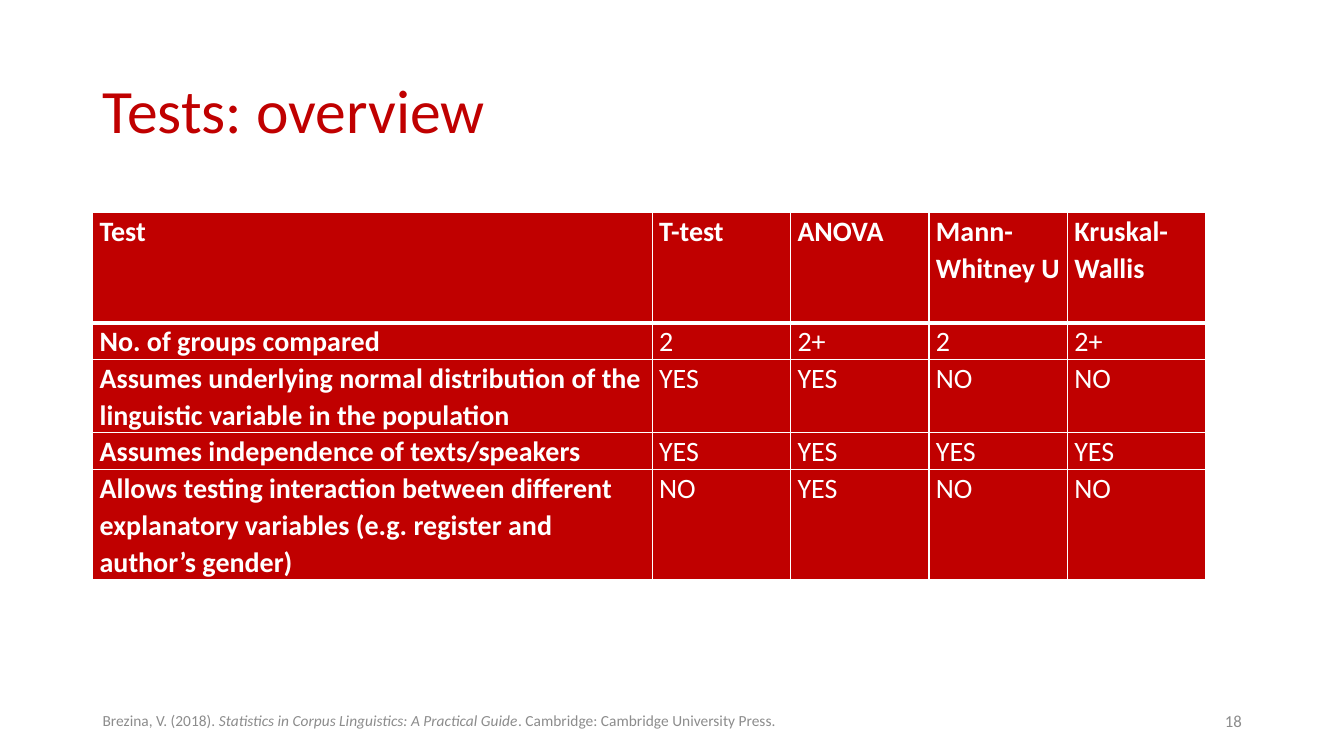
from lxml import etree
from pptx import Presentation
from pptx.dml.color import RGBColor
from pptx.enum.text import MSO_ANCHOR, PP_ALIGN
from pptx.oxml.ns import qn
from pptx.util import Pt

LEFT, RIGHT, JUST = PP_ALIGN.LEFT, PP_ALIGN.RIGHT, PP_ALIGN.JUSTIFY
MIDDLE = MSO_ANCHOR.MIDDLE

# Content
TITLE = "Tests: overview"
ROWS = [
    ("Test", "T-test", "ANOVA", "Mann-Whitney U", "Kruskal-Wallis"),
    ("No. of groups compared", "2", "2+", "2", "2+"),
    ("Assumes underlying normal distribution of the linguistic variable "
     "in the population", "YES", "YES", "NO", "NO"),
    ("Assumes independence of texts/speakers", "YES", "YES", "YES", "YES"),
    ("Allows testing interaction between different explanatory variables "
     "(e.g. register and author’s gender)", "NO", "YES", "NO", "NO"),
]
SOURCE = [
    ("Brezina, V. (2018). ", False),
    ("Statistics in Corpus Linguistics: A Practical Guide", True),
    (". Cambridge: Cambridge University Press.", False),
]
NUMBER = [("18", False)]

# Format
COLORS = {"red": "C00000", "white": "FFFFFF", "gray": "8C8C8C"}
FONT = "Calibri"
EDGE = 66.2
WIDTHS = [399.6] + [98.9] * 4
LINES = [3, 1, 2, 1, 3]
LINE = 26.2


def color(name):
    return RGBColor.from_string(COLORS[name])


def style(font, name, **values):
    values = {"name": FONT, **values}
    for key, value in values.items():
        setattr(font, key, value)
    font.color.rgb = color(name)


def place(shape, *box):
    for key, value in zip(("left", "top", "width", "height"), box):
        setattr(shape, key, Pt(value))


def label(box, parts, size, align):
    shape = slide.shapes.add_textbox(*map(Pt, box))
    frame = shape.text_frame
    frame.word_wrap = True
    frame.vertical_anchor = MIDDLE
    para = frame.paragraphs[0]
    para.alignment = align
    for text, slant in parts:
        run = para.add_run()
        run.text = text
        style(run.font, "gray", size=Pt(size), italic=slant)


def border(cell, row):
    props = cell._tc.get_or_add_tcPr()
    widths = {"lnL": 1, "lnR": 1, "lnT": 3 if row == 1 else 1,
              "lnB": 3 if row == 0 else 1}
    for spot, (tag, width) in enumerate(widths.items()):
        line = etree.Element(qn("a:" + tag), w=str(Pt(width)))
        fill = etree.SubElement(line, qn("a:solidFill"))
        etree.SubElement(fill, qn("a:srgbClr"), val=COLORS["white"])
        props.insert(spot, line)


prs = Presentation()
prs.slide_width, prs.slide_height = Pt(960), Pt(540)
slide = prs.slides.add_slide(prs.slide_layouts[5])

# Title
title = slide.shapes.title
place(title, EDGE, 28.8, 828, 104.4)
title.text_frame.text = TITLE
title.text_frame.vertical_anchor = MIDDLE
head = title.text_frame.paragraphs[0]
head.alignment = LEFT
head.line_spacing = 0.9
style(head.runs[0].font, "red", size=Pt(44))

# Table
box = (EDGE, 152, sum(WIDTHS), LINE * sum(LINES))
table = slide.shapes.add_table(len(ROWS), len(WIDTHS), *map(Pt, box)).table
for col, width in zip(table.columns, WIDTHS):
    col.width = Pt(width)
for r, texts in enumerate(ROWS):
    table.rows[r].height = Pt(LINE * LINES[r])
    for c, text in enumerate(texts):
        cell = table.cell(r, c)
        cell.text = text
        cell.margin_left = cell.margin_right = Pt(5)
        cell.margin_top = cell.margin_bottom = Pt(0)
        cell.fill.solid()
        cell.fill.fore_color.rgb = color("red")
        border(cell, r)
        para = cell.text_frame.paragraphs[0]
        para.alignment = JUST if r == 0 else LEFT
        para.line_spacing = 1.07
        style(para.runs[0].font, "white", size=Pt(20), bold=r == 0 or c == 0)

# Footer
label((EDGE, 500.4, 576, 28.8), SOURCE, 11, LEFT)
label((678.2, 500.4, 216, 28.8), NUMBER, 12, RIGHT)

prs.save("out.pptx")
